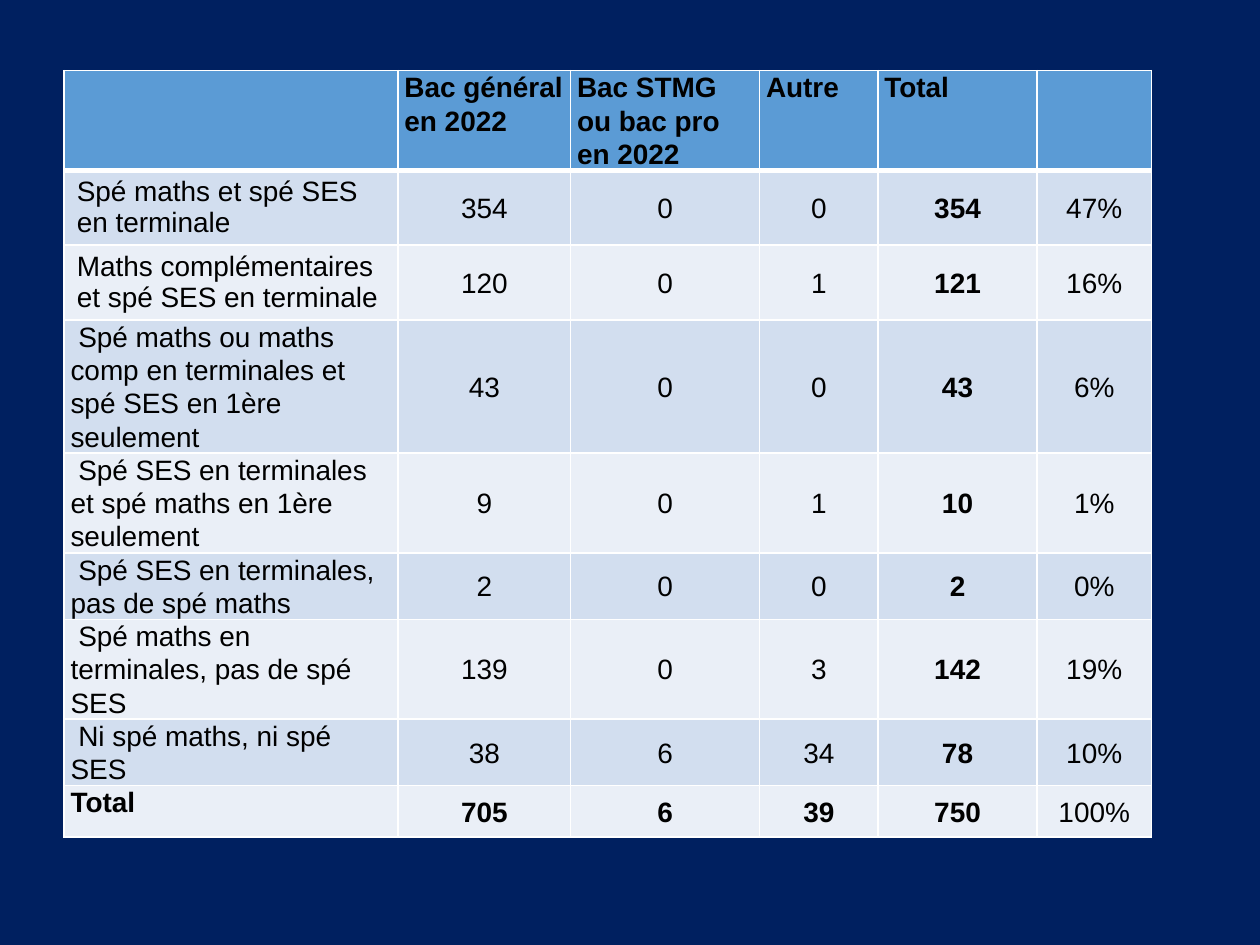
"""Build a slide with a table of bac results by maths and SES choices."""
from lxml import etree
from pptx import Presentation
from pptx.dml.color import RGBColor
from pptx.enum.text import MSO_ANCHOR, PP_ALIGN
from pptx.oxml.ns import qn
from pptx.util import Inches, Pt

MIDDLE, TOP = MSO_ANCHOR.MIDDLE, MSO_ANCHOR.TOP
CENTER, LEFT = PP_ALIGN.CENTER, PP_ALIGN.LEFT
NAVY = RGBColor(0x00, 0x20, 0x60)
BLUE = RGBColor(0x5B, 0x9B, 0xD5)
BANDS = (RGBColor(0xD2, 0xDE, 0xEF), RGBColor(0xEA, 0xEF, 0xF7))
WHITE = RGBColor(0xFF, 0xFF, 0xFF)
BLACK = RGBColor(0x00, 0x00, 0x00)

ROWS = [
    ("", "Bac général en 2022", "Bac STMG ou bac pro en 2022", "Autre", "Total", ""),
    ("Spé maths et spé SES en terminale", "354", "0", "0", "354", "47%"),
    ("Maths complémentaires et spé SES en terminale", "120", "0", "1", "121", "16%"),
    (" Spé maths ou maths comp en terminales et spé SES en 1ère seulement",
     "43", "0", "0", "43", "6%"),
    (" Spé SES en terminales et spé maths en 1ère seulement", "9", "0", "1", "10", "1%"),
    (" Spé SES en terminales, pas de spé maths", "2", "0", "0", "2", "0%"),
    (" Spé maths en terminales, pas de spé SES", "139", "0", "3", "142", "19%"),
    (" Ni spé maths, ni spé SES", "38", "6", "34", "78", "10%"),
    ("Total", "705", "6", "39", "750", "100%"),
]
COLUMN_WIDTHS = (2.65, 1.37, 1.5, 0.94, 1.26, 0.91)
ROW_HEIGHT = 0.41
TABLE_BOX = (0.51, 0.56, 8.62, 6.44)
ROOMY_ROWS = (1, 2)
TOTAL_COLUMN = 4
TIGHT_MARGINS = {"margin_left": Inches(0.05), "margin_right": Inches(0.05),
                 "margin_top": 0, "margin_bottom": 0}
TIGHT_SPACING = {"line_spacing": 1.07, "space_after": Pt(8)}


def apply(target, values):
    """Set each attribute of the target."""
    for name, value in values.items():
        setattr(target, name, value)


def add_borders(cell, row):
    """Draw white borders, with a thick rule under the header."""
    widths = {"lnL": 1, "lnR": 1, "lnT": 3 if row == 1 else 1, "lnB": 3 if row == 0 else 1}
    properties = cell._tc.get_or_add_tcPr()
    for side, width in widths.items():
        line = etree.SubElement(properties, qn(f"a:{side}"), w=str(Pt(width)))
        fill = etree.SubElement(line, qn("a:solidFill"))
        etree.SubElement(fill, qn("a:srgbClr"), val=str(WHITE))


def format_cell(cell, row, column, text):
    """Fill in one cell according to its place in the table."""
    is_value = row > 0 and column > 0
    is_total = row == len(ROWS) - 1 and column <= TOTAL_COLUMN
    is_roomy = row in ROOMY_ROWS and column == 0
    add_borders(cell, row)
    cell.fill.solid()
    cell.fill.fore_color.rgb = BANDS[(row - 1) % 2] if row else BLUE
    cell.vertical_anchor = MIDDLE if is_value else TOP
    cell.text = text
    paragraph = cell.text_frame.paragraphs[0]
    paragraph.alignment = CENTER if is_value else LEFT
    if not is_roomy:
        apply(cell, TIGHT_MARGINS)
        apply(paragraph, TIGHT_SPACING)
    for run in paragraph.runs:
        apply(run.font, {"name": "Arial", "size": Pt(16),
                         "bold": row == 0 or column == TOTAL_COLUMN or is_total})
        run.font.color.rgb = BLACK


def main():
    """Create the presentation and save it."""
    presentation = Presentation()
    apply(presentation, {"slide_width": Inches(10), "slide_height": Inches(7.5)})
    slide = presentation.slides.add_slide(presentation.slide_layouts[6])
    slide.background.fill.solid()
    slide.background.fill.fore_color.rgb = NAVY

    box = [Inches(value) for value in TABLE_BOX]
    shape = slide.shapes.add_table(len(ROWS), len(COLUMN_WIDTHS), *box)
    table = shape.table
    for column, width in zip(table.columns, COLUMN_WIDTHS):
        column.width = Inches(width)
    for row in table.rows:
        row.height = Inches(ROW_HEIGHT)
    apply(shape, {"width": box[2], "height": box[3]})
    for row, texts in enumerate(ROWS):
        for column, text in enumerate(texts):
            format_cell(table.cell(row, column), row, column, text)
    presentation.save("out.pptx")


if __name__ == "__main__":
    main()
